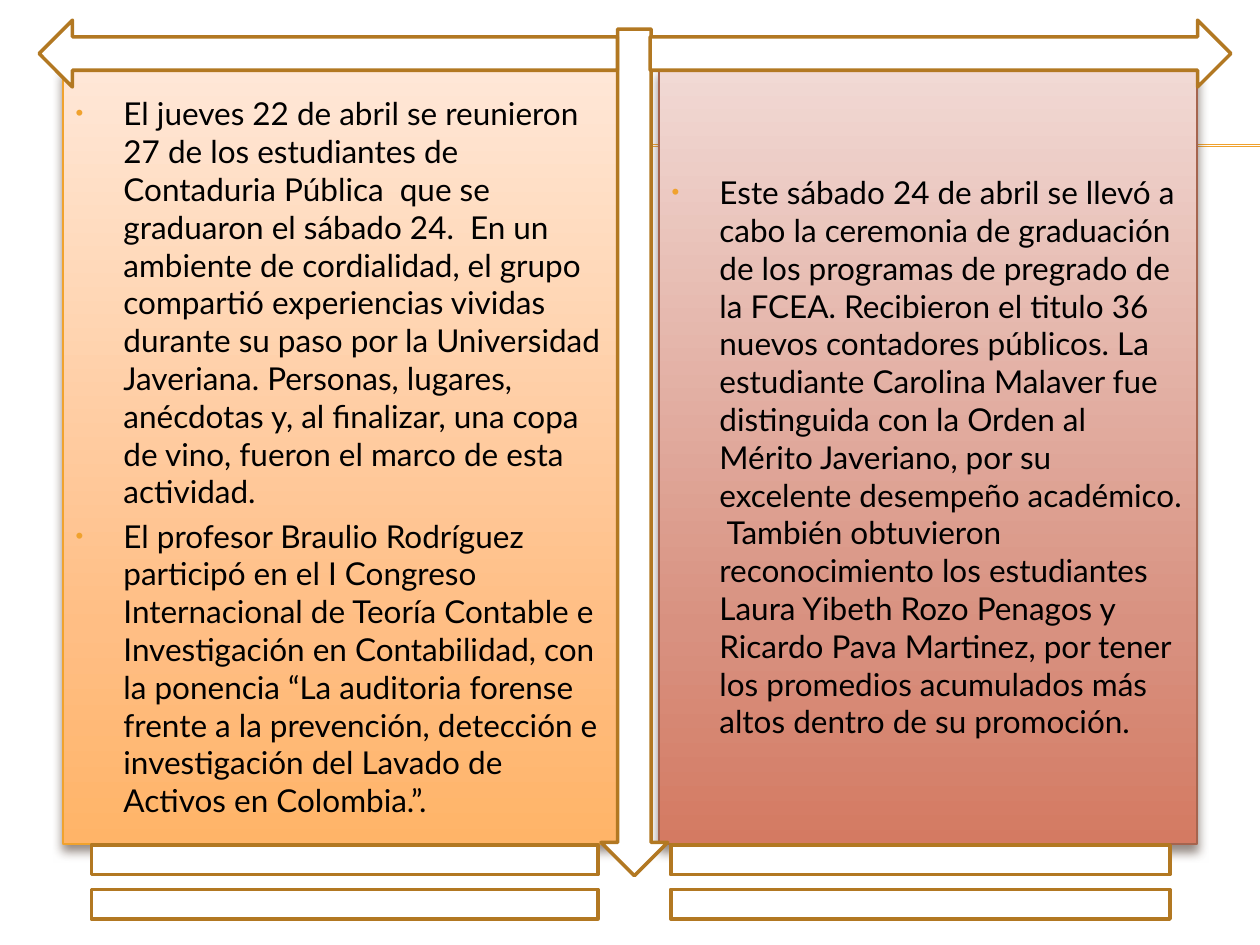
from typing import NamedTuple

from lxml import etree
from pptx import Presentation
from pptx.dml.color import RGBColor
from pptx.enum.shapes import MSO_CONNECTOR, MSO_SHAPE
from pptx.enum.text import MSO_ANCHOR, MSO_AUTO_SIZE, PP_ALIGN
from pptx.oxml.ns import qn
from pptx.util import Inches, Pt

STRAIGHT = MSO_CONNECTOR.STRAIGHT
DOWN, LEFT, RIGHT = MSO_SHAPE.DOWN_ARROW, MSO_SHAPE.LEFT_ARROW, MSO_SHAPE.RIGHT_ARROW
EQUALS = MSO_SHAPE.MATH_EQUAL
MIDDLE = MSO_ANCHOR.MIDDLE
NO_AUTOFIT = MSO_AUTO_SIZE.NONE
ALIGN_LEFT = PP_ALIGN.LEFT

SLIDE_W, SLIDE_H = Inches(10), Inches(7.5)
TWO_CONTENT_LAYOUT = 3
GOLD, BRONZE, WHITE, BLACK = "F0A22E", "B27822", "FFFFFF", "000000"
SHADOW = "4E3B30"


class Area(NamedTuple):
    """Left, top, width and height in percent of the slide."""
    left: float
    top: float
    width: float
    height: float


class Panel(NamedTuple):
    area: Area
    gradient: tuple[str, str, str]
    border: str
    news: list[str]


class Ornament(NamedTuple):
    preset: int
    area: Area


PANEL_TOP, PANEL_H = 7.33, 82
ARROW_TOP, ARROW_H = 2.13, 7.07
EQUALS_TOP, EQUALS_H = 86.67, 13.33

PANELS = [
    Panel(Area(5, PANEL_TOP, 44.2, PANEL_H), ("FFE7D7", "FFBE84", "FFB468"), GOLD, [
        "El jueves 22 de abril se reunieron 27 de los estudiantes de Contaduria Pública  que se "
        "graduaron el sábado 24.  En un ambiente de cordialidad, el grupo compartió experiencias "
        "vividas durante su paso por la Universidad Javeriana. Personas, lugares, anécdotas y, al "
        "finalizar, una copa de vino, fueron el marco de esta actividad.",
        "El profesor Braulio Rodríguez participó en el I Congreso Internacional de Teoría Contable "
        "e Investigación en Contabilidad, con la ponencia “La auditoria forense frente a la "
        "prevención, detección e investigación del Lavado de Activos en Colombia.”.",
    ]),
    Panel(Area(52.3, PANEL_TOP, 42.7, PANEL_H), ("F1D9D4", "D89180", "D47A62"), "A5644E", [
        "Este sábado 24 de abril se llevó a cabo la ceremonia de graduación de los programas de "
        "pregrado de la FCEA. Recibieron el titulo 36 nuevos contadores públicos. La estudiante "
        "Carolina Malaver fue distinguida con la Orden al Mérito Javeriano, por su excelente "
        "desempeño académico.  También obtuvieron reconocimiento los estudiantes Laura Yibeth "
        "Rozo Penagos y Ricardo Pava Martinez, por tener los promedios acumulados más altos "
        "dentro de su promoción.",
    ]),
]

ORNAMENTS = [
    Ornament(DOWN, Area(47.7, 3.07, 5.3, 89.6)),
    Ornament(RIGHT, Area(51.6, ARROW_TOP, 46.1, ARROW_H)),
    Ornament(LEFT, Area(3.1, ARROW_TOP, 45.9, ARROW_H)),
    Ornament(EQUALS, Area(0, EQUALS_TOP, 54.7, EQUALS_H)),
    Ornament(EQUALS, Area(46.1, EQUALS_TOP, 53.9, EQUALS_H)),
]


def color(value: str) -> RGBColor:
    return RGBColor.from_string(value)


def across(percent: float) -> int:
    return round(SLIDE_W * percent / 100)


def down(percent: float) -> int:
    return round(SLIDE_H * percent / 100)


def to_emu(area: Area) -> tuple[int, int, int, int]:
    return across(area.left), down(area.top), across(area.width), down(area.height)


def add_node(parent, tag: str, **attributes):
    return etree.SubElement(parent, qn(tag), {k: str(v) for k, v in attributes.items()})


def set_line(line, tone: str, width: float) -> None:
    line.color.rgb = color(tone)
    line.width = Pt(width)


def set_gradient(properties, tones: tuple[str, str, str]) -> None:
    gradient = add_node(properties, "a:gradFill", rotWithShape=1)
    stops = add_node(gradient, "a:gsLst")
    for percent, tone in zip((0, 72, 100), tones):
        add_node(add_node(stops, "a:gs", pos=percent * 1000), "a:srgbClr", val=tone)
    add_node(gradient, "a:lin", ang=90 * 60000, scaled=0)


def set_shadow(properties) -> None:
    effects = add_node(properties, "a:effectLst")
    shadow = add_node(effects, "a:outerShdw", blurRad=Pt(6), dist=Pt(4),
                      dir=90 * 60000, rotWithShape=0)
    add_node(add_node(shadow, "a:srgbClr", val=SHADOW), "a:alpha", val=60000)


def set_bullet(paragraph, tone: str, percent: int) -> None:
    properties = paragraph._p.get_or_add_pPr()
    properties.set("marL", str(Inches(0.38)))
    properties.set("indent", str(-Inches(0.38)))
    add_node(add_node(properties, "a:buClr"), "a:srgbClr", val=tone)
    add_node(properties, "a:buSzPct", val=percent * 1000)
    add_node(properties, "a:buFont", typeface="Arial")
    add_node(properties, "a:buChar", char="•")


def write(frame, texts: list[str], *, font="Lato", size=18, tone=BLACK, gap=3.6) -> None:
    frame.word_wrap = True
    frame.auto_size = NO_AUTOFIT
    frame.vertical_anchor = MIDDLE
    for index, text in enumerate(texts):
        paragraph = frame.paragraphs[0] if index == 0 else frame.add_paragraph()
        set_bullet(paragraph, GOLD, 70)
        paragraph.alignment = ALIGN_LEFT
        paragraph.space_before = Pt(gap if index else 0)
        run = paragraph.add_run()
        run.text = text
        run.font.name, run.font.size = font, Pt(size)
        run.font.color.rgb = color(tone)


def draw_rule(slide, height: float) -> None:
    rule = slide.shapes.add_connector(STRAIGHT, across(5.6), down(height), SLIDE_W, down(height))
    set_line(rule.line, GOLD, 0.75)
    add_node(rule._element.spPr, "a:effectLst")


def fill_panel(placeholder, panel: Panel) -> None:
    (placeholder.left, placeholder.top,
     placeholder.width, placeholder.height) = to_emu(panel.area)
    properties = placeholder._element.spPr
    set_gradient(properties, panel.gradient)
    set_line(placeholder.line, panel.border, 0.79)
    set_shadow(properties)
    write(placeholder.text_frame, panel.news)


def draw_ornament(slide, ornament: Ornament) -> None:
    shape = slide.shapes.add_shape(ornament.preset, *to_emu(ornament.area))
    shape.shadow.inherit = False
    shape.fill.solid()
    shape.fill.fore_color.rgb = color(WHITE)
    set_line(shape.line, BRONZE, 2)


def main() -> None:
    deck = Presentation()
    deck.slide_width, deck.slide_height = SLIDE_W, SLIDE_H
    slide = deck.slides.add_slide(deck.slide_layouts[TWO_CONTENT_LAYOUT])
    title, *bodies = slide.placeholders
    tree = slide.shapes._spTree
    tree.remove(title._element)
    for body in bodies:
        tree.remove(body._element)
    for height in (15.33, 15.47):
        draw_rule(slide, height)
    for body, panel in zip(bodies, PANELS):
        tree.append(body._element)
        fill_panel(body, panel)
    for ornament in ORNAMENTS:
        draw_ornament(slide, ornament)
    deck.save("out.pptx")


if __name__ == "__main__":
    main()
